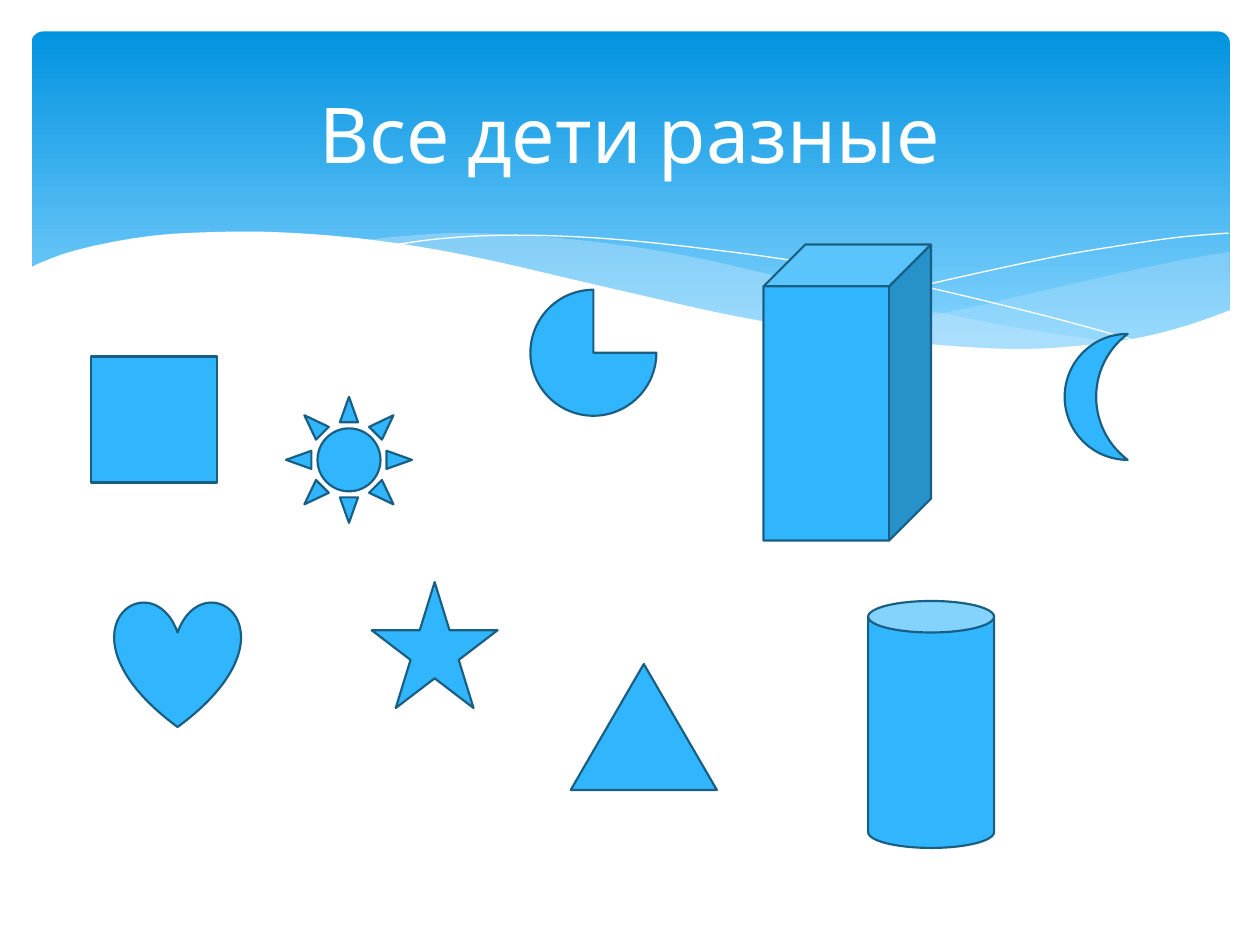
from lxml import etree
from pptx import Presentation
from pptx import util as u
from pptx.dml.color import RGBColor
from pptx.enum import shapes, text
from pptx.oxml.ns import qn

SHAPE = shapes.MSO_SHAPE


def color(value):
    return RGBColor.from_string(value)


def write(frame, words, font="Cabin", size=44, ink="FFFFFF", align=text.PP_ALIGN.CENTER):
    para = frame.paragraphs[0]
    para.alignment = align
    span = para.add_run()
    span.text = words
    span.font.name = font
    span.font.size = u.Pt(size)
    span.font.color.rgb = color(ink)


def smooth(points, steps=6):
    padded = [points[0], *points, points[-1]]
    curve = [points[0]]
    for a, b, c, d in zip(padded, padded[1:], padded[2:], padded[3:]):
        for step in range(1, steps + 1):
            t = step / steps
            curve.append(tuple(
                q + t / 2 * (r - p + t * (2 * p - 5 * q + 4 * r - s + t * (3 * (q - r) + s - p)))
                for p, q, r, s in zip(a, b, c, d)
            ))
    return curve


class Painter:
    fill = "31B6FD"
    edge = "195F84"
    edge_width = 1.25

    def __init__(self, slide):
        self.slide = slide

    def figure(self, kind, left, top, width=1, height=1):
        shape = self.slide.shapes.add_shape(
            kind, u.Inches(left), u.Inches(top), u.Inches(width), u.Inches(height))
        shape.shadow.inherit = False
        shape.fill.solid()
        shape.fill.fore_color.rgb = color(self.fill)
        shape.line.color.rgb = color(self.edge)
        shape.line.width = u.Pt(self.edge_width)
        return shape

    def banner(self, left, top, width, height, stops, radius):
        shape = self.figure(SHAPE.ROUNDED_RECTANGLE, left, top, width, height)
        shape.adjustments[0] = radius
        shape.line.fill.background()
        shape.fill.gradient()
        shape.fill.gradient_angle = 270
        for stop, (position, value) in zip(shape.fill.gradient_stops, stops):
            stop.position = position
            stop.color.rgb = color(value)

    def outline(self, points, closed):
        start, *rest = [(u.Inches(x), u.Inches(y)) for x, y in points]
        builder = self.slide.shapes.build_freeform(*start)
        builder.add_line_segments(rest, close=closed)
        shape = builder.convert_to_shape()
        shape.shadow.inherit = False
        return shape

    def wave(self, *edges, fill="C6E7FC", opacity=100):
        points = [point for edge in edges for point in smooth(edge)]
        shape = self.outline(points, True)
        shape.line.fill.background()
        shape.fill.solid()
        shape.fill.fore_color.rgb = color(fill)
        tint = shape.fill._xPr.find(".//" + qn("a:srgbClr"))
        etree.SubElement(tint, qn("a:alpha"), val=str(opacity * 1000))

    def thread(self, points):
        shape = self.outline(smooth(points), False)
        shape.fill.background()
        shape.line.color.rgb = color("FFFFFF")
        shape.line.width = u.Pt(0)

    def title(self, words, left, top, width, height):
        box = self.slide.shapes.add_textbox(
            u.Inches(left), u.Inches(top), u.Inches(width), u.Inches(height))
        frame = box.text_frame
        frame.word_wrap = True
        frame.vertical_anchor = text.MSO_ANCHOR.MIDDLE
        write(frame, words)


def draw_header(painter):
    painter.banner(0.25, 0.25, 9.51, 2.7, [(0, "0293E0"), (0.9, "83D3FE")], 0.034)
    painter.wave(
        [(9.76, 2), (9.35, 2.07), (8.61, 2.23), (7.79, 2.42), (7.06, 2.57), (6.61, 2.65)],
        [(6.61, 2.65), (7.05, 2.71), (7.57, 2.76), (8.03, 2.78), (8.54, 2.76),
         (8.97, 2.7), (9.35, 2.62), (9.76, 2.47)],
        opacity=29)
    painter.wave(
        [(8.93, 2.73), (8.07, 2.6), (7.41, 2.47), (6.29, 2.22), (5.55, 2.05),
         (4.89, 1.94), (4.2, 1.87), (3.61, 1.85), (3.13, 1.88), (2.86, 1.91)],
        [(2.86, 1.91), (3.62, 2.03), (4.49, 2.22), (5.3, 2.4), (6.01, 2.55),
         (6.65, 2.66), (7.22, 2.74), (7.73, 2.77), (8.18, 2.78), (8.57, 2.77), (8.93, 2.73)],
        opacity=40)
    painter.thread(
        [(3.09, 1.95), (3.44, 1.9), (3.87, 1.87), (4.33, 1.87), (4.89, 1.9), (5.56, 1.97),
         (6.36, 2.08), (7.27, 2.26), (8.31, 2.51), (9.07, 2.72)])
    painter.thread(
        [(6.13, 2.57), (6.72, 2.41), (7.48, 2.23), (8.36, 2.04), (8.95, 1.94),
         (9.38, 1.88), (9.75, 1.85)])
    painter.wave(
        [(9.77, 2.46), (9.4, 2.59), (8.99, 2.69), (8.5, 2.75), (8.09, 2.77), (7.61, 2.75),
         (7.08, 2.7), (6.48, 2.62), (5.79, 2.5), (5.03, 2.33), (4.47, 2.2), (3.91, 2.07),
         (3.4, 1.97), (2.92, 1.9), (2.5, 1.86), (2.11, 1.84), (1.77, 1.84), (1.32, 1.86),
         (0.95, 1.91), (0.59, 1.99), (0.36, 2.07), (0.23, 2.13)],
        [(0.23, 3.29), (9.77, 3.29)],
        fill="FFFFFF")
    painter.title("Все дети разные", 0.5, 0.37, 9, 1.37)


def main():
    deck = Presentation()
    deck.slide_width = u.Inches(10)
    deck.slide_height = u.Inches(7.5)
    painter = Painter(deck.slides.add_slide(deck.slide_layouts[6]))
    draw_header(painter)
    for figure in [
        (SHAPE.RECTANGLE, 0.72, 2.83),
        (SHAPE.SUN, 2.27, 3.15),
        (SHAPE.STAR_5_POINT, 2.95, 4.62),
        (SHAPE.PIE, 4.21, 2.3),
        (SHAPE.HEART, 0.91, 4.77),
        (SHAPE.CAN, 6.89, 4.77, 1, 1.96),
        (SHAPE.CUBE, 6.06, 1.94, 1.33, 2.35),
        (SHAPE.ISOSCELES_TRIANGLE, 4.53, 5.27, 1.16, 1),
        (SHAPE.MOON, 8.45, 2.65, 0.5, 1),
    ]:
        painter.figure(*figure)
    deck.save("out.pptx")


if __name__ == "__main__":
    main()
